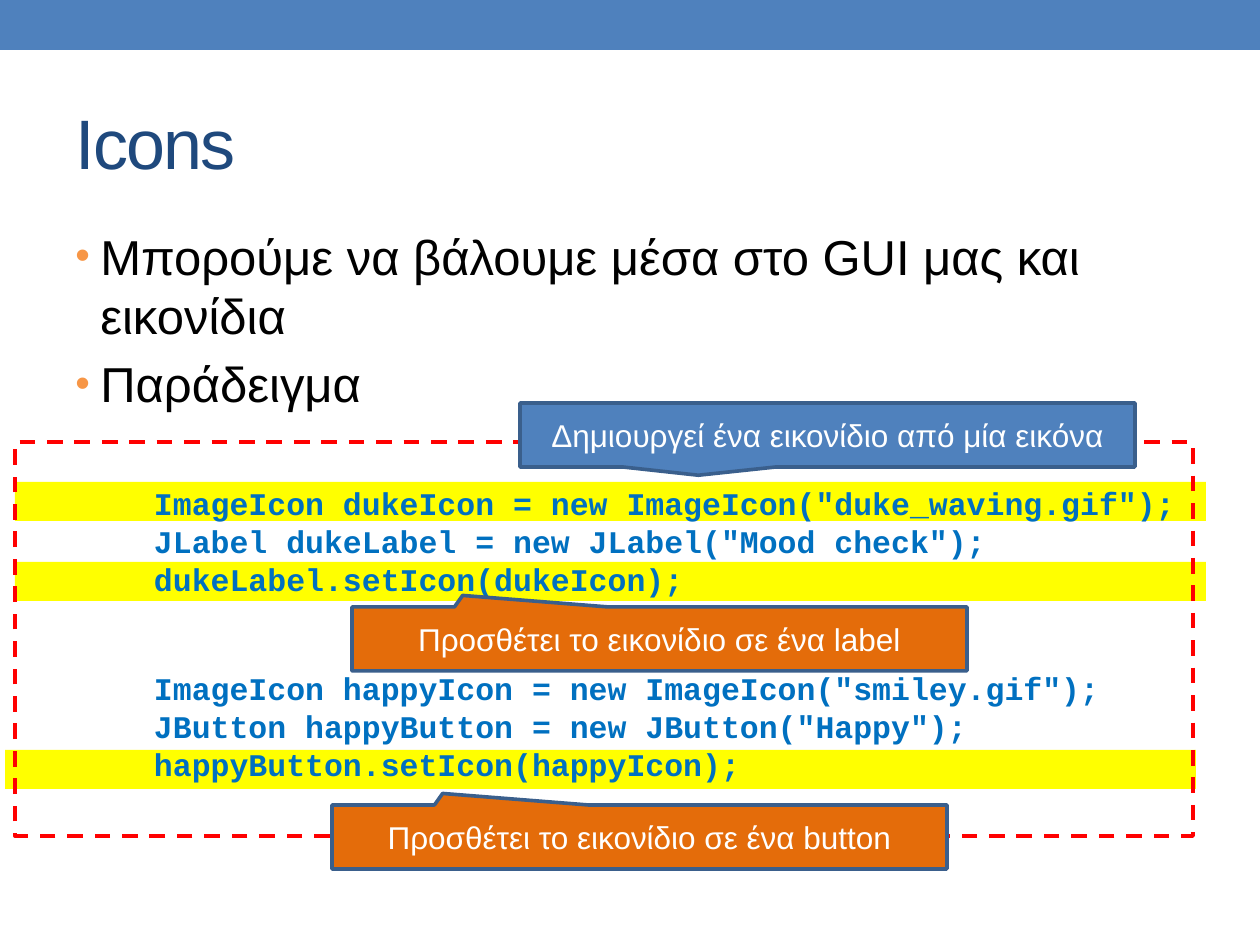
import pptx
import pptx.dml.color
import pptx.enum.dml
import pptx.enum.shapes
import pptx.enum.text
import pptx.oxml
import pptx.oxml.ns
import pptx.util

RGBColor = pptx.dml.color.RGBColor
Shape = pptx.enum.shapes.MSO_SHAPE
Anchor = pptx.enum.text.MSO_ANCHOR
Align = pptx.enum.text.PP_ALIGN

BLUE = RGBColor(0x4F, 0x81, 0xBD)
NAVY = RGBColor(0x1F, 0x49, 0x7D)
OUTLINE = RGBColor(0x3A, 0x5F, 0x8C)
ORANGE = RGBColor(0xE4, 0x6C, 0x0A)
BULLET = RGBColor(0xF7, 0x96, 0x46)
YELLOW = RGBColor(0xFF, 0xFF, 0x00)
RED = RGBColor(0xFF, 0x00, 0x00)
CODE_BLUE = RGBColor(0x00, 0x70, 0xC0)
BLACK = RGBColor(0x00, 0x00, 0x00)
WHITE = RGBColor(0xFF, 0xFF, 0xFF)

PX_PER_INCH = 126
CODE_GROUPS = [
    ['ImageIcon dukeIcon = new ImageIcon("duke_waving.gif");',
     'JLabel dukeLabel = new JLabel("Mood check");',
     'dukeLabel.setIcon(dukeIcon);'],
    ['ImageIcon happyIcon = new ImageIcon("smiley.gif");',
     'JButton happyButton = new JButton("Happy");',
     'happyButton.setIcon(happyIcon);'],
]


def px(length):
    return pptx.util.Emu(round(length * 914400 / PX_PER_INCH))


def place(shape, box):
    shape.left, shape.top, shape.width, shape.height = map(px, box)


def write(paragraph, text, size=18, color=WHITE, font="Arial", bold=False,
          align=Align.LEFT, before=0, tracking=None):
    paragraph.alignment = align
    paragraph.space_before = pptx.util.Pt(before)
    run = paragraph.add_run()
    run.text = text
    run.font.name = font
    run.font.size = pptx.util.Pt(size)
    run.font.bold = bold
    run.font.color.rgb = color
    if tracking is not None:
        run._r.get_or_add_rPr().set("spc", str(tracking))


def next_paragraph(frame, index):
    return frame.add_paragraph() if index else frame.paragraphs[0]


def add_block(slide, kind, box, fill=None, line=None, width=2.08):
    shape = slide.shapes.add_shape(kind, *map(px, box))
    shape.shadow.inherit = False
    if fill is None:
        shape.fill.background()
    else:
        shape.fill.solid()
        shape.fill.fore_color.rgb = fill
    if line is None:
        shape.line.fill.background()
    else:
        shape.line.color.rgb = line
        shape.line.width = pptx.util.Pt(width)
    return shape


def add_title(slide, box, text):
    title = slide.shapes.title
    place(title, box)
    title.text_frame.vertical_anchor = Anchor.MIDDLE
    write(title.text_frame.paragraphs[0], text, size=40, color=NAVY, tracking=-100)


def set_bullet(paragraph, indent):
    properties = paragraph._p.get_or_add_pPr()
    properties.set("marL", str(px(indent)))
    properties.set("indent", str(-px(indent)))
    namespace = pptx.oxml.ns.nsdecls("a")
    for xml in (f'<a:buClr {namespace}><a:srgbClr val="{BULLET}"/></a:buClr>',
                f'<a:buSzPct {namespace} val="85000"/>',
                f'<a:buFont {namespace} typeface="Arial"/>',
                f'<a:buChar {namespace} char="•"/>'):
        properties.append(pptx.oxml.parse_xml(xml))


def add_bullets(slide, box, texts):
    frame = slide.shapes.add_textbox(*map(px, box)).text_frame
    frame.word_wrap = True
    for index, text in enumerate(texts):
        paragraph = next_paragraph(frame, index)
        write(paragraph, text, size=28, color=BLACK, before=5.6)
        set_bullet(paragraph, 25)


def add_code(slide, box):
    left, top, width, height = box
    for offset_x, offset_y in ((-10, 308), (0, 120), (0, 40)):
        add_block(slide, Shape.RECTANGLE,
                  (left + offset_x, top + offset_y, width + 13, 39), fill=YELLOW)
    frame_shape = add_block(slide, Shape.RECTANGLE, box, line=RED, width=2.25)
    frame_shape.line.dash_style = pptx.enum.dml.MSO_LINE.DASH
    frame = frame_shape.text_frame
    frame.word_wrap = True
    frame.vertical_anchor = Anchor.TOP
    frame.margin_left = px(139)
    frame.margin_top = px(42)
    frame.margin_right = 0
    for group_index, group in enumerate(CODE_GROUPS):
        for line_index, text in enumerate(group):
            paragraph = next_paragraph(frame, group_index + line_index)
            starts_later_group = group_index > 0 and line_index == 0
            write(paragraph, text, color=CODE_BLUE, font="Courier New", bold=True,
                  before=41 if starts_later_group else 0)


def add_callout(slide, box, text, fill, tip):
    callout = add_block(slide, Shape.RECTANGULAR_CALLOUT, box, fill=fill, line=OUTLINE)
    callout.adjustments[0], callout.adjustments[1] = tip
    frame = callout.text_frame
    frame.word_wrap = True
    frame.vertical_anchor = Anchor.MIDDLE
    write(frame.paragraphs[0], text, align=Align.CENTER)


def main():
    presentation = pptx.Presentation()
    presentation.slide_width = px(1260)
    presentation.slide_height = px(945)
    slide = presentation.slides.add_slide(presentation.slide_layouts[5])

    add_block(slide, Shape.RECTANGLE, (0, 0, 1260, 50), fill=BLUE)
    add_title(slide, (63, 73, 1134, 136), "Icons")
    add_bullets(slide, (63, 220, 1134, 672),
                ["Μπορούμε να βάλουμε μέσα στο GUI μας και εικονίδια", "Παράδειγμα"])
    add_code(slide, (15, 442, 1178, 394))

    upper_tip = (-0.32, -0.68)
    for left, top, text, fill, tip in (
            (520, 403, "Δημιουργεί ένα εικονίδιο από μία εικόνα", BLUE, (-0.21, 0.63)),
            (352, 607, "Προσθέτει το εικονίδιο σε ένα label", ORANGE, upper_tip),
            (332, 805, "Προσθέτει το εικονίδιο σε ένα button", ORANGE, upper_tip)):
        add_callout(slide, (left, top, 615, 64), text, fill, tip)

    presentation.save("out.pptx")


if __name__ == "__main__":
    main()
